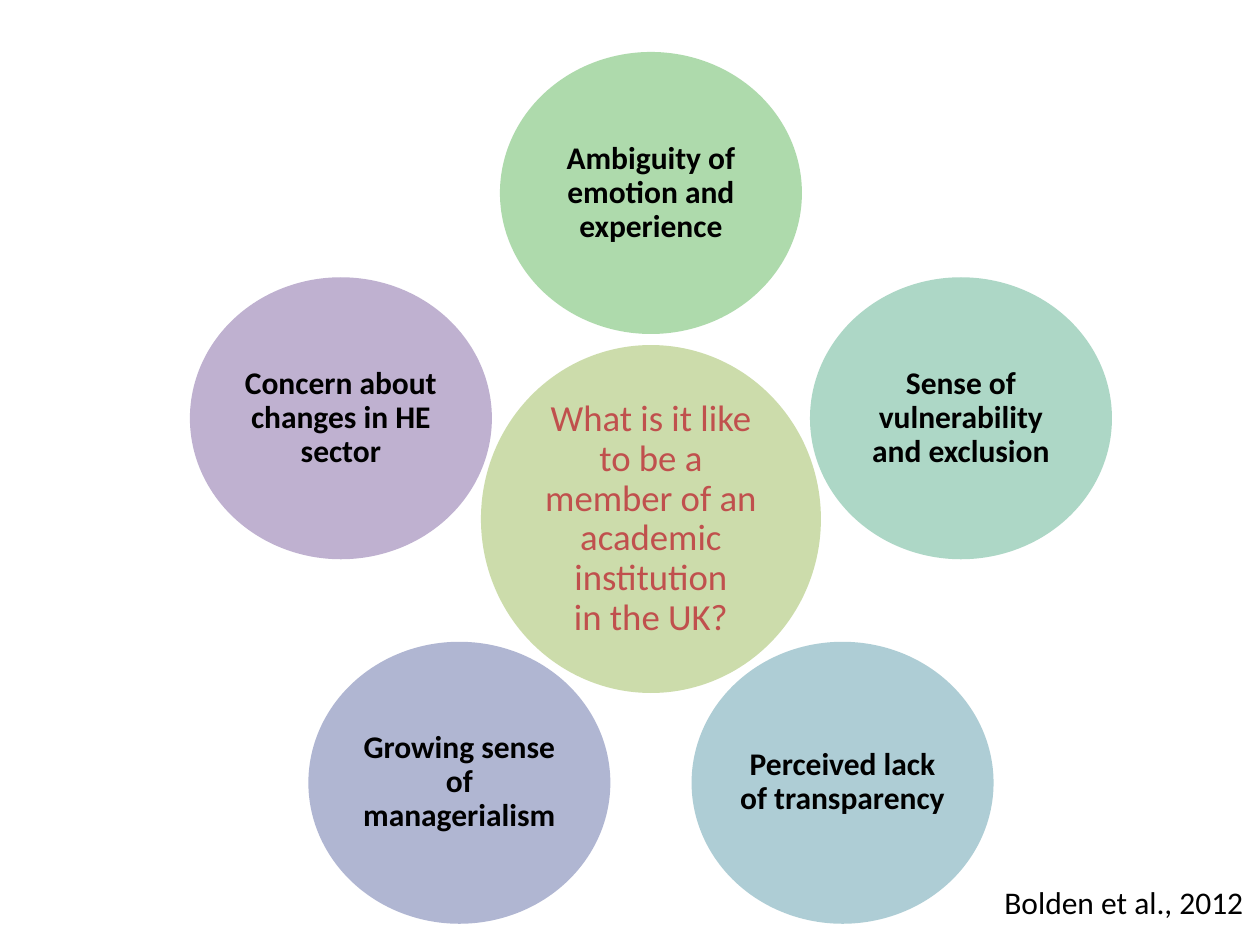
"""Build a slide with five themes circling a central question."""
import math

import lxml.etree
import pptx
import pptx.dml.color
import pptx.enum.shapes
import pptx.enum.text
import pptx.oxml.ns
import pptx.util

PX_PER_INCH = 126
FONT = "Calibri"
CENTER = (651, 519)
ORBIT = 326
HUB_SIZE = (340, 348)
THEME_SIZE = (302, 282)
QUESTION = ("What is it like to be a member of an academic institution", "in the UK?")
THEMES = [
    ("Ambiguity of emotion and experience", "5FB65B"),
    ("Sense of vulnerability and exclusion", "5DB18E"),
    ("Perceived lack of transparency", "5F9DAC"),
    ("Growing sense of managerialism", "626EA7"),
    ("Concern about changes in HE sector", "8064A2"),
]


def px(length):
    """Turn pixels into EMU."""
    return pptx.util.Emu(round(length * 914400 / PX_PER_INCH))


def color(value):
    """Turn a hex string into a colour."""
    return pptx.dml.color.RGBColor.from_string(value)


def add_span(para, text, size, hue, bold=False):
    """Add one formatted run to a paragraph."""
    span = para.add_run()
    span.text = text
    span.font.name = FONT
    span.font.size = pptx.util.Pt(size)
    span.font.bold = bold
    span.font.color.rgb = color(hue)


def fill_half_transparent(shape, hue):
    """Give a shape a solid fill at half opacity."""
    shape.fill.solid()
    shape.fill.fore_color.rgb = color(hue)
    tint = shape._element.spPr.find(".//" + pptx.oxml.ns.qn("a:srgbClr"))
    lxml.etree.SubElement(tint, pptx.oxml.ns.qn("a:alpha"), val="50000")


def add_circle(page, center, dimensions, hue, lines, size, text_hue, bold=False):
    """Add a translucent ellipse around a centre, with its text inside."""
    (x, y), (width, height) = center, dimensions
    circle = page.shapes.add_shape(
        pptx.enum.shapes.MSO_SHAPE.OVAL,
        px(x - width / 2), px(y - height / 2), px(width), px(height))
    circle.shadow.inherit = False
    circle.line.fill.background()
    fill_half_transparent(circle, hue)
    frame = circle.text_frame
    frame.word_wrap = True
    frame.vertical_anchor = pptx.enum.text.MSO_ANCHOR.MIDDLE
    frame.margin_left = frame.margin_right = px(4)
    frame.margin_top = frame.margin_bottom = px(4)
    para = frame.paragraphs[0]
    para.alignment = pptx.enum.text.PP_ALIGN.CENTER
    para.line_spacing = 0.9
    for index, line in enumerate(lines):
        if index:
            para.add_line_break()
        add_span(para, line, size, text_hue, bold)


def add_citation(page, text):
    """Add the source credit in the lower right corner."""
    box = page.shapes.add_textbox(px(992), px(877), px(268), px(50))
    box.text_frame.auto_size = pptx.enum.text.MSO_AUTO_SIZE.SHAPE_TO_FIT_TEXT
    box.text_frame.word_wrap = False
    add_span(box.text_frame.paragraphs[0], text, 18, "000000")


def main():
    """Build and save the deck."""
    deck = pptx.Presentation()
    deck.slide_width, deck.slide_height = px(1260), px(945)
    page = deck.slides.add_slide(deck.slide_layouts[6])
    add_circle(page, CENTER, HUB_SIZE, "9BBB59", QUESTION, 21, "C0504D")
    for index, (text, hue) in enumerate(THEMES):
        angle = math.tau * index / len(THEMES)
        spot = (CENTER[0] + ORBIT * math.sin(angle),
                CENTER[1] - ORBIT * math.cos(angle))
        add_circle(page, spot, THEME_SIZE, hue, [text], 18, "000000", bold=True)
    add_citation(page, "Bolden et al., 2012")
    deck.save("out.pptx")


if __name__ == "__main__":
    main()
